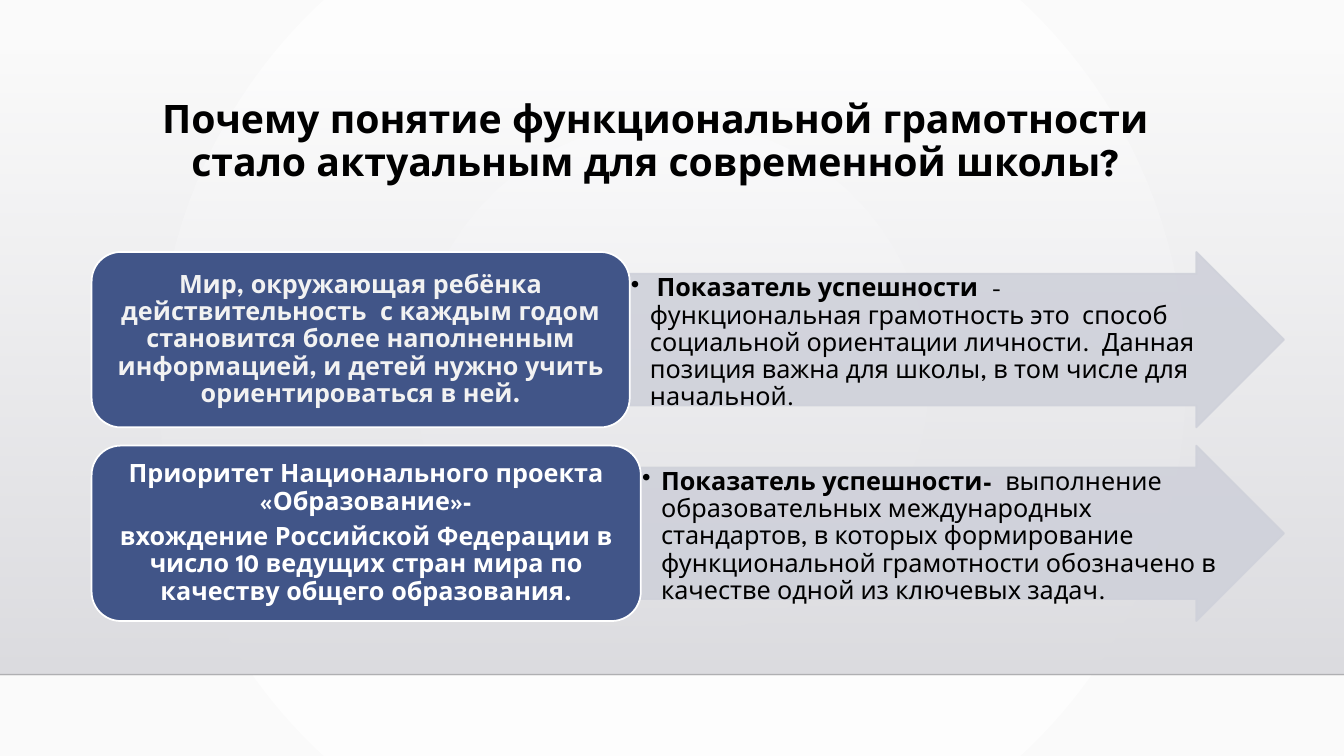
from dataclasses import dataclass

from lxml import etree
from pptx import Presentation
from pptx.dml.color import RGBColor
from pptx.enum import shapes, text
from pptx.oxml import ns
from pptx.util import Cm, Pt

FONT = "League Spartan"
BLACK = RGBColor(0x00, 0x00, 0x00)
WHITE = RGBColor(0xFF, 0xFF, 0xFF)
OFF_WHITE = RGBColor(0xFA, 0xFA, 0xFA)
SOFT_WHITE = RGBColor(0xF2, 0xF2, 0xF2)
NAVY = RGBColor(0x41, 0x55, 0x88)
ARROW_GREY = RGBColor(0xCF, 0xD1, 0xDA)
WALL_TOP = RGBColor(0xDC, 0xDC, 0xE0)
WALL_BOTTOM = RGBColor(0xDE, 0xDE, 0xE2)
FLOOR_LINE = RGBColor(0x00, 0x00, 0x01)

SLIDE_WIDTH, SLIDE_HEIGHT = Cm(33.87), Cm(19.05)
FLOOR = Cm(17)
ROWS_LEFT, ROWS_RIGHT, ROWS_TOP = Cm(2.31), Cm(32.36), Cm(6.35)
ROW_HEIGHT, ROW_STEP = Cm(4.42), Cm(4.88)

TITLE = "Почему понятие функциональной грамотности стало актуальным для современной школы?"


@dataclass
class Row:
    reason: list[str]
    reason_color: RGBColor
    reason_width: int
    indicator: str
    explanation: str


ROWS = [
    Row(
        ["Мир, окружающая ребёнка действительность  с каждым годом становится более "
         "наполненным информацией, и детей нужно учить ориентироваться в ней."],
        SOFT_WHITE, Cm(13.56),
        " Показатель успешности  ",
        "- функциональная грамотность это  способ социальной ориентации личности.  Данная "
        "позиция важна для школы, в том числе для начальной.",
    ),
    Row(
        ["Приоритет Национального проекта «Образование»-",
         "вхождение Российской Федерации в число 10 ведущих стран мира по качеству "
         "общего образования."],
        WHITE, Cm(13.84),
        "Показатель успешности- ",
        " выполнение образовательных международных стандартов, в которых формирование "
        "функциональной грамотности обозначено в качестве одной из ключевых задач.",
    ),
]


def add_xml(parent, tag: str, **attributes: str):
    return etree.SubElement(parent, ns.qn(tag), attributes)


def set_opacity(owner, percent: int) -> None:
    """Give every colour inside the XML element the same opacity."""
    for color in owner.iter(ns.qn("a:srgbClr")):
        add_xml(color, "a:alpha", val=str(percent * 1000))


def set_gradient(fill, first: RGBColor, last: RGBColor) -> None:
    """Fill with a two-colour gradient that runs downwards."""
    fill.gradient()
    fill.gradient_angle = 270
    for stop, color in zip(fill.gradient_stops, (first, last)):
        stop.color.rgb = color


def add_text(frame, paragraphs: list[list[tuple[str, bool]]], *, size: float = 18,
             color: RGBColor = BLACK, align=text.PP_ALIGN.CENTER,
             anchor=text.MSO_ANCHOR.MIDDLE, space_after: float = 0,
             insets: tuple[int, int] = (Cm(0.25), Cm(0.13)), bullet: bool = False) -> None:
    """Write paragraphs made of (wording, bold) runs."""
    frame.word_wrap = True
    frame.vertical_anchor = anchor
    frame.margin_left = frame.margin_right = insets[0]
    frame.margin_top = frame.margin_bottom = insets[1]
    for index, runs in enumerate(paragraphs):
        paragraph = frame.add_paragraph() if index else frame.paragraphs[0]
        paragraph.alignment = align
        paragraph.line_spacing = 0.9
        paragraph.space_after = Pt(space_after)
        if bullet:
            paragraph.level = 1
            properties = paragraph._p.get_or_add_pPr()
            properties.set("marL", str(Cm(0.48)))
            properties.set("indent", str(-Cm(0.48)))
            add_xml(properties, "a:buChar", char="•")
        for wording, bold in runs:
            run = paragraph.add_run()
            run.text = wording
            run.font.name = FONT
            run.font.size = Pt(size)
            run.font.bold = bold
            run.font.color.rgb = color


def add_block(slide, preset, left: int, top: int, width: int, fill: RGBColor, line: RGBColor):
    block = slide.shapes.add_shape(preset, left, top, width, ROW_HEIGHT)
    block.shadow.inherit = False
    block.fill.solid()
    block.fill.fore_color.rgb = fill
    block.line.color.rgb = line
    block.line.width = Pt(1.25)
    return block


def add_backdrop(slide) -> None:
    backdrop = slide.background.fill
    set_gradient(backdrop, WHITE, OFF_WHITE)
    linear = next(slide.background._cSld.iter(ns.qn("a:lin")))
    radial = etree.Element(ns.qn("a:path"), {"path": "circle"})
    add_xml(radial, "a:fillToRect", l="50000", t="50000", r="50000", b="50000")
    linear.getparent().replace(linear, radial)

    wall_top = Cm(1.3)
    wall = slide.shapes.add_shape(
        shapes.MSO_SHAPE.RECTANGLE, 0, wall_top, SLIDE_WIDTH, FLOOR - wall_top)
    wall.shadow.inherit = False
    wall.line.fill.background()
    set_gradient(wall.fill, WALL_TOP, WALL_BOTTOM)
    set_opacity(next(wall._element.iter(ns.qn("a:gs"))), 0)

    floor = slide.shapes.add_connector(
        shapes.MSO_CONNECTOR.STRAIGHT, 0, FLOOR, SLIDE_WIDTH, FLOOR)
    floor.line.color.rgb = FLOOR_LINE
    floor.line.width = Pt(1)
    set_opacity(floor._element.spPr, 20)
    add_xml(floor._element.spPr, "a:effectLst")


def add_row(slide, row: Row, top: int) -> None:
    arrow_left = ROWS_LEFT + row.reason_width
    arrow = add_block(slide, shapes.MSO_SHAPE.RIGHT_ARROW, arrow_left, top,
                      ROWS_RIGHT - arrow_left, ARROW_GREY, ARROW_GREY)
    arrow.adjustments[0] = 0.75
    set_opacity(arrow._element.spPr, 90)
    add_text(arrow.text_frame, [[(row.indicator, True), (row.explanation, False)]],
             align=text.PP_ALIGN.LEFT, anchor=text.MSO_ANCHOR.TOP, space_after=3,
             insets=(Cm(0.03), Cm(0.03)), bullet=True)

    reason = add_block(slide, shapes.MSO_SHAPE.ROUNDED_RECTANGLE, ROWS_LEFT, top,
                       row.reason_width, NAVY, WHITE)
    add_text(reason.text_frame, [[(wording, True)] for wording in row.reason],
             color=row.reason_color, space_after=6, insets=(Cm(0.18), Cm(0.1)))


def main() -> None:
    deck = Presentation()
    deck.slide_width, deck.slide_height = SLIDE_WIDTH, SLIDE_HEIGHT
    slide = deck.slides.add_slide(deck.slide_layouts[6])
    add_backdrop(slide)
    title = slide.shapes.add_textbox(Cm(3.18), Cm(2.39), Cm(26.67), Cm(2.92))
    add_text(title.text_frame, [[(TITLE, True)]], size=28, anchor=text.MSO_ANCHOR.TOP)
    for index, row in enumerate(ROWS):
        add_row(slide, row, ROWS_TOP + index * ROW_STEP)
    deck.save("out.pptx")


if __name__ == "__main__":
    main()
